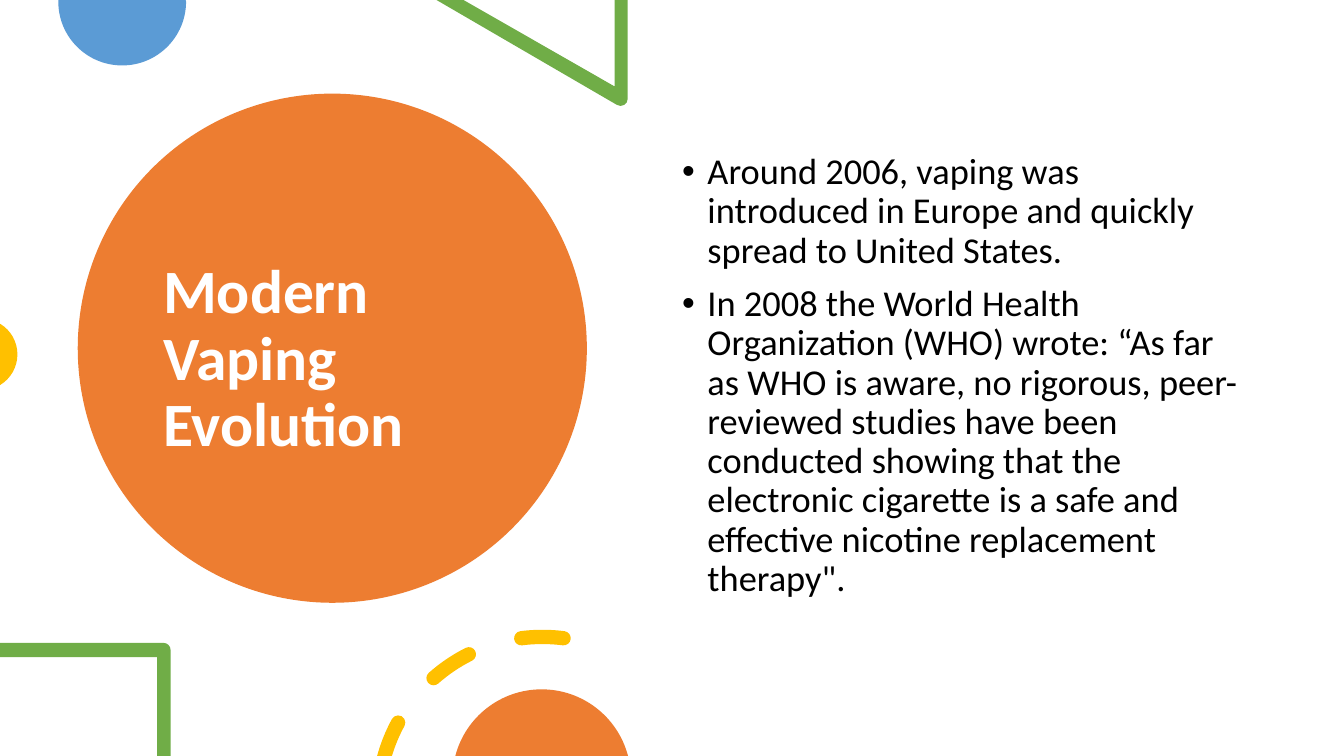
from math import asin, ceil, cos, degrees, radians, sin, tan

from lxml import etree
from pptx import Presentation
from pptx.dml.color import RGBColor
from pptx.enum.shapes import MSO_SHAPE
from pptx.enum.text import MSO_ANCHOR
from pptx.oxml import parse_xml
from pptx.util import Cm, Pt

# Content
TITLE = "Modern Vaping Evolution"
BULLETS = [
    "Around 2006, vaping was introduced in Europe and quickly spread to United States.",
    "In 2008 the World Health Organization (WHO) wrote: “As far as WHO is aware, "
    "no rigorous, peer-reviewed studies have been conducted showing that the electronic "
    "cigarette is a safe and effective nicotine replacement therapy\".",
]
FONT = "Calibri"
COLORS = {
    "orange": "ED7D31", "blue": "5B9BD5", "green": "70AD47",
    "yellow": "FFC000", "white": "FFFFFF", "black": "000000",
}
A_NS = "http://schemas.openxmlformats.org/drawingml/2006/main"

# Layout, in centimetres
SLIDE_W, SLIDE_H = 33.87, 19.05
DISC = (1.96, 2.36, 12.83, 12.83)
TITLE_BOX = (3.86, 3.43, 8.99, 11.3)
BODY_BOX = (16.94, 2.29, 14.6, 13.59)
BODY_INSET = 1.57
CORNER = 0.18
RING_X, RING_Y, RING_R = 13.67, 20.19, 4.14
DASHES = [(228.5, 243.4), (262.6, 277.4)]
CUT_DASH_END = 208.6


def color(name):
    return RGBColor.from_string(COLORS[name])


# An outline is a list of steps: one point is a corner, three points a Bezier curve.
def corners(*points):
    return [(point,) for point in points]


def on_circle(cx, cy, r, angle):
    return cx + r * cos(angle), cy + r * sin(angle)


def arc(cx, cy, r, start, end):
    """Start point and curves; angles in degrees, clockwise from the right."""
    count = ceil(abs(end - start) / 90)
    sweep = radians(end - start) / count
    pull = 4 / 3 * tan(sweep / 4) * r
    steps = corners(on_circle(cx, cy, r, radians(start)))
    for i in range(count):
        a = radians(start) + i * sweep
        b = a + sweep
        (x1, y1), (x2, y2) = on_circle(cx, cy, r, a), on_circle(cx, cy, r, b)
        steps.append(((x1 - pull * sin(a), y1 + pull * cos(a)),
                      (x2 + pull * sin(b), y2 - pull * cos(b)), (x2, y2)))
    return steps


def ring_cap(angle, turn):
    """Round end of a dash, as curves only."""
    x, y = on_circle(RING_X, RING_Y, RING_R, radians(angle))
    return arc(x, y, CORNER, angle + turn, angle + turn + 180)[1:]


def ring_dash(start, end, cut=False):
    outer_r, inner_r = RING_R + CORNER, RING_R - CORNER
    outer_start = inner_start = start
    if cut:
        outer_start, inner_start = (
            180 + degrees(asin((RING_Y - SLIDE_H) / r)) for r in (outer_r, inner_r))
    steps = arc(RING_X, RING_Y, outer_r, outer_start, end) + ring_cap(end, 0)
    steps += arc(RING_X, RING_Y, inner_r, end, inner_start)[1:]
    return steps if cut else steps + ring_cap(start, 180)


def paint(sp, fill):
    sp.fill.solid()
    sp.fill.fore_color.rgb = color(fill)
    sp.line.fill.background()
    sp.shadow.inherit = False


def add_outline(s, fill, *contours):
    builder = None
    for (first,), *rest in contours:
        x, y = map(Cm, first)
        if builder is None:
            builder = s.shapes.build_freeform(x, y)
        else:
            builder.move_to(x, y)
        builder.add_line_segments([(Cm(px), Cm(py)) for step in rest for px, py in step])
    sp = builder.convert_to_shape()
    paint(sp, fill)

    # Turn each run of three curve points into one Bezier segment
    lines = iter(list(sp._element.iter(f"{{{A_NS}}}lnTo")))
    for step in (step for contour in contours for step in contour[1:]):
        nodes = [next(lines) for _ in step]
        if len(nodes) == 3:
            curve = etree.Element(f"{{{A_NS}}}cubicBezTo")
            nodes[0].addprevious(curve)
            for node in nodes:
                curve.append(node[0])
                node.getparent().remove(node)


def add_text(s, box, lines, size, fill, bold=False):
    tf = s.shapes.add_textbox(*map(Cm, box)).text_frame
    tf.word_wrap = True
    for i, line in enumerate(lines):
        p = tf.paragraphs[0] if i == 0 else tf.add_paragraph()
        p.text = line
        p.line_spacing = 0.9
        p.space_before = Pt(10 if i else 0)
        p.font.name, p.font.size, p.font.bold = FONT, Pt(size), bold
        p.font.color.rgb = color(fill)
    return tf


def add_bullet(p):
    pPr = p._p.get_or_add_pPr()
    pPr.set("marL", str(Cm(0.64)))
    pPr.set("indent", str(-Cm(0.64)))
    for xml in (f'<a:buFont xmlns:a="{A_NS}" typeface="Arial"/>',
                f'<a:buChar xmlns:a="{A_NS}" char="•"/>'):
        pPr.insert_element_before(parse_xml(xml), "a:tabLst", "a:defRPr", "a:extLst")


def main():
    prs = Presentation()
    prs.slide_width, prs.slide_height = Cm(SLIDE_W), Cm(SLIDE_H)
    s = prs.slides.add_slide(prs.slide_layouts[6])

    # Title disc
    paint(s.shapes.add_shape(MSO_SHAPE.OVAL, *map(Cm, DISC)), "orange")
    tf = add_text(s, TITLE_BOX, [TITLE], 44, "white", bold=True)
    tf.vertical_anchor = MSO_ANCHOR.MIDDLE

    # Top and left edge: blue circle, green triangle, yellow circle
    add_outline(s, "blue", corners((4.68, 0), (1.47, 0)) + arc(3.08, 0.04, 1.61, 180, 0))
    add_outline(s, "green", corners((15.82, 0), (15.49, 0), (15.49, 2.18), (11.68, 0), (11, 0))
                + arc(15.64, 2.49, CORNER, 120, 0))
    add_outline(s, "yellow", arc(-0.46, 8.93, 0.9, -59, 59))

    # Bullets
    tf = add_text(s, BODY_BOX, BULLETS, 26, "black")
    tf.margin_top = Cm(BODY_INSET)
    for p in tf.paragraphs:
        add_bullet(p)

    # Bottom edge: green corner, dashed ring, orange circle
    add_outline(s, "green", corners((0, 16.2)) + arc(4.12, 16.38, CORNER, 270, 360)
                + corners((4.3, SLIDE_H), (3.96, SLIDE_H), (3.96, 16.56), (0, 16.56)))
    add_outline(s, "yellow", ring_dash(180, CUT_DASH_END, cut=True),
                *(ring_dash(*dash) for dash in DASHES))
    add_outline(s, "orange", arc(13.65, 19.62, 2.25, 194.7, 345.3))

    prs.save("out.pptx")


if __name__ == "__main__":
    main()
